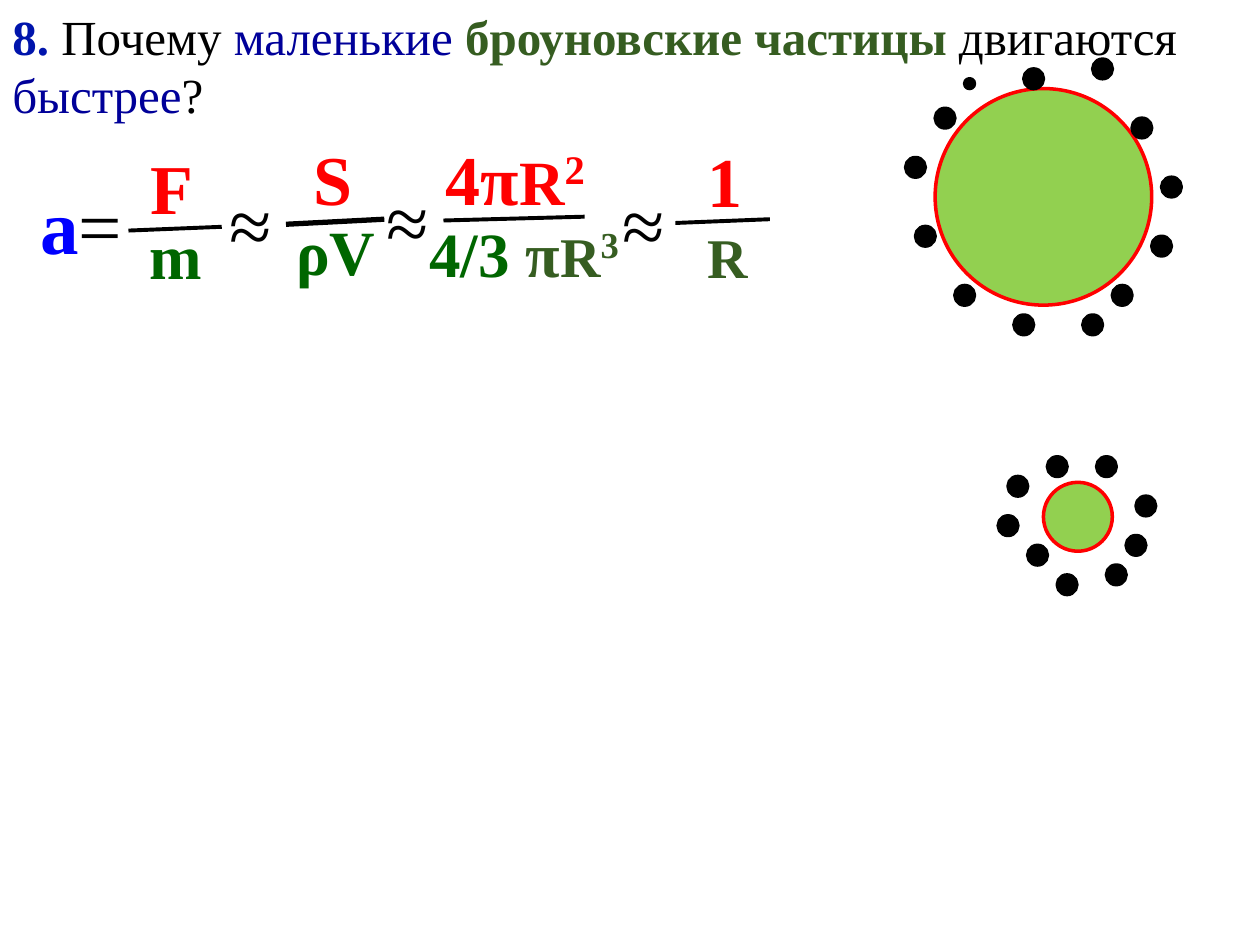
"""Build a slide on why small Brownian particles move faster."""
from lxml.etree import SubElement
from pptx import Presentation
from pptx.dml.color import RGBColor
from pptx.enum.shapes import MSO_CONNECTOR, MSO_SHAPE
from pptx.enum.text import MSO_AUTO_SIZE
from pptx.oxml.ns import qn
from pptx.util import Inches, Pt

FONT = "Times New Roman"
BLACK = RGBColor(0x00, 0x00, 0x00)
RED = RGBColor(0xFF, 0x00, 0x00)
BLUE = RGBColor(0x00, 0x00, 0xFF)
NAVY = RGBColor(0x00, 0x00, 0x99)
ROYAL = RGBColor(0x00, 0x14, 0xAC)
GREEN = RGBColor(0x00, 0x66, 0x00)
OLIVE = RGBColor(0x36, 0x5D, 0x21)
LIME = RGBColor(0x92, 0xD0, 0x50)

WIDTH, HEIGHT, COLUMNS = 10, 7.5, 128
CELL = WIDTH / COLUMNS

QUESTION = [
    ("8. ", 28, ROYAL, True), ("Почему ", 28, BLACK, False),
    ("маленькие ", 28, NAVY, False), ("броуновские частицы ", 28, OLIVE, True),
    ("двигаются ", 28, BLACK, False), ("быстрее", 28, NAVY, False),
    ("?", 28, BLACK, False),
]
ACCELERATION = [("а", 44, BLUE, True), ("=", 44, BLACK, False)]
APPROXIMATELY = [("≈", 44, BLACK, False)]
AREA = [("4π", 40, RED, True), ("R", 36, RED, True), ("2", 40, RED, True, 30)]
VOLUME = [
    ("4/3 ", 36, GREEN, True), ("π", 36, OLIVE, True),
    ("R", 32, OLIVE, True), ("3", 36, OLIVE, True, 30),
]

TEXTS = [
    ((0, 0, 10, 1.04), QUESTION, True),
    ((0.22, 1.36, 1.02, 0.84), ACCELERATION, True),
    ((1.1, 1.1, 0.54, 0.77), [("F", 40, RED, True)], False),
    ((1.09, 1.67, 0.83, 0.73), [("m", 36, GREEN, True)], True),
    ((1.72, 1.35, 0.63, 0.84), APPROXIMATELY, True),
    ((2.25, 1.03, 0.65, 0.77), [(" S", 40, RED, True)], False),
    ((2.14, 1.64, 1.17, 0.71), [(" ", 32, GREEN, True), ("ρV", 36, GREEN, True)], True),
    ((2.97, 1.33, 0.63, 0.84), APPROXIMATELY, True),
    ((3.44, 1.03, 1.41, 0.77), AREA, True),
    ((3.31, 1.65, 1.88, 0.71), VOLUME, True),
    ((4.84, 1.35, 0.63, 0.84), APPROXIMATELY, True),
    ((5.52, 1.04, 0.7, 0.77), [("1", 40, RED, True)], True),
    ((5.52, 1.66, 0.63, 0.71), [("R", 32, OLIVE, True), (" ", 36, BLACK, True)], True),
]
FRACTION_BARS = [
    (1.02, 1.83, 1.76, 1.8, 2.25), (2.27, 1.78, 3.05, 1.74, 3),
    (3.52, 1.75, 4.64, 1.72, 2.25), (5.36, 1.77, 6.11, 1.74, 2.25),
]

LARGE_PARTICLE = (95, 9, 22)
LARGE_MOLECULES = [
    (103, 32), (97, 29), (93, 23), (92, 16), (111, 6), (115, 12), (118, 18),
    (117, 24), (113, 29), (110, 32), (104, 7), (95, 11),
]
TINY_MOLECULE = (98, 8, 1)
SMALL_PARTICLE = (106, 49, 7)
SMALL_MOLECULES = [
    (104, 55), (101, 52), (106, 46), (111, 46), (115, 50), (114, 54),
    (112, 57), (102, 48), (107, 58),
]
SMALL_SHIFT = 0.4


def add_text(page, place, spans, wraps):
    box = page.shapes.add_textbox(*map(Inches, place))
    frame = box.text_frame
    frame.word_wrap = wraps
    frame.auto_size = MSO_AUTO_SIZE.SHAPE_TO_FIT_TEXT
    for text, size, color, bold, *raised in spans:
        span = frame.paragraphs[0].add_run()
        span.text = text
        span.font.name = FONT
        span.font.size = Pt(size)
        span.font.bold = bold
        span.font.color.rgb = color
        if raised:
            span.font._element.set("baseline", str(raised[0] * 1000))


def add_bar(page, left, top, right, bottom, weight):
    ends = map(Inches, (left, top, right, bottom))
    bar = page.shapes.add_connector(MSO_CONNECTOR.STRAIGHT, *ends)
    bar.line.color.rgb = BLACK
    bar.line.width = Pt(weight)
    SubElement(bar._element.spPr, qn("a:effectLst"))


def add_circle(page, column, row, cells, fill=BLACK, outline=BLACK):
    left, top, size = (Inches(value * CELL) for value in (column, row, cells))
    circle = page.shapes.add_shape(MSO_SHAPE.OVAL, left, top, size, size)
    circle.shadow.inherit = False
    circle.fill.solid()
    circle.fill.fore_color.rgb = fill
    circle.line.color.rgb = outline
    circle.line.width = Pt(2)


def main():
    deck = Presentation()
    deck.slide_width, deck.slide_height = Inches(WIDTH), Inches(HEIGHT)
    page = deck.slides.add_slide(deck.slide_layouts[6])
    for place, spans, wraps in TEXTS:
        add_text(page, place, spans, wraps)
    for bar in FRACTION_BARS:
        add_bar(page, *bar)
    add_circle(page, *TINY_MOLECULE)
    for particle, molecules, shift in (
        (LARGE_PARTICLE, LARGE_MOLECULES, 0),
        (SMALL_PARTICLE, SMALL_MOLECULES, SMALL_SHIFT),
    ):
        add_circle(page, *particle, LIME, RED)
        for column, row in molecules:
            add_circle(page, column + shift, row + shift, 2)
    deck.save("out.pptx")


if __name__ == "__main__":
    main()
